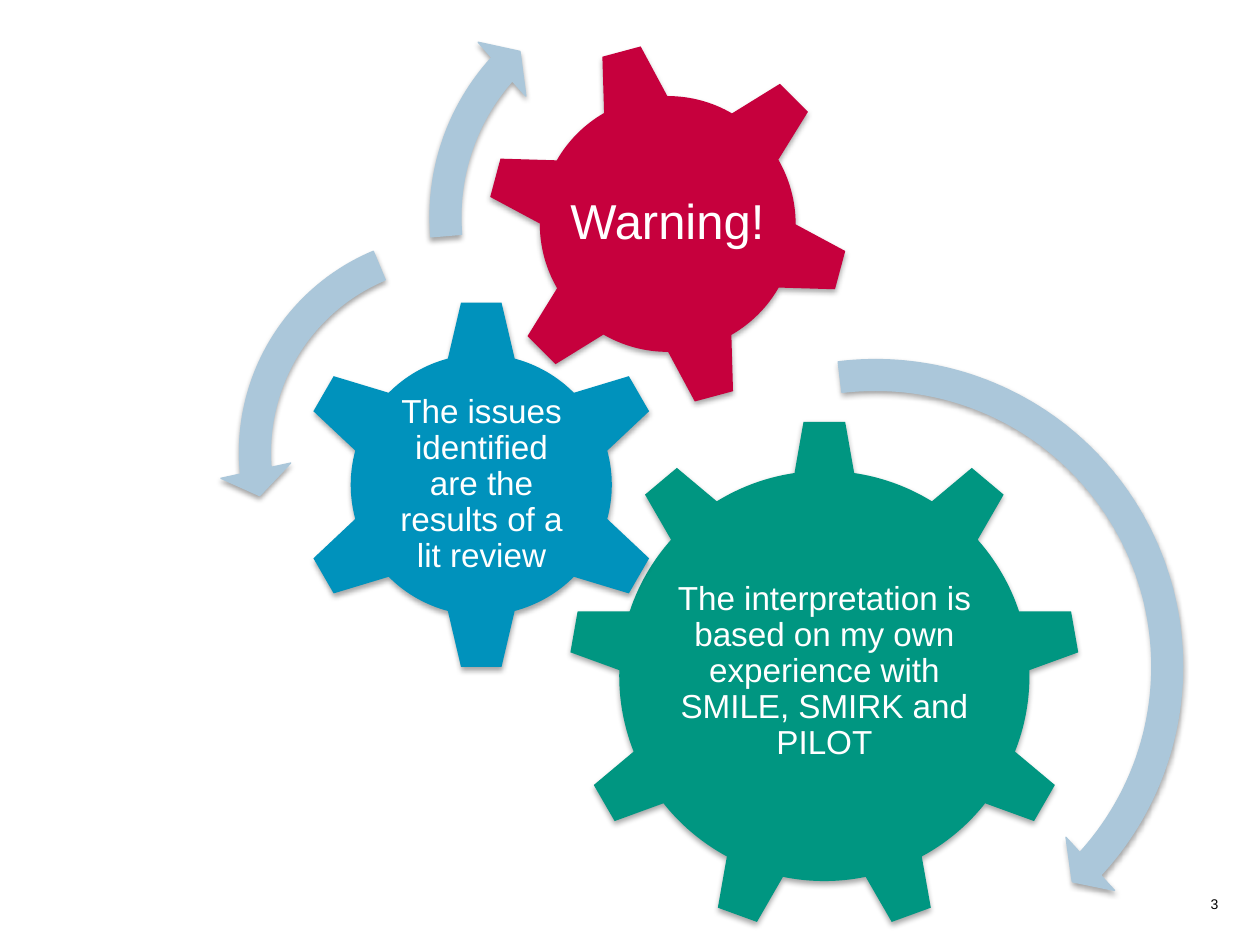
from dataclasses import dataclass

from lxml import etree
from pptx import Presentation
from pptx.dml import color
from pptx.enum import shapes, text
from pptx.oxml import ns
from pptx.util import Pt


@dataclass(frozen=True)
class Theme:
    font: str = "Arial"
    white: str = "FFFFFF"
    black: str = "000000"
    green: str = "009681"
    blue: str = "0092BC"
    red: str = "C6003D"
    pale: str = "ABC7DA"
    title: float = 28
    body: float = 19
    small: float = 8


@dataclass(frozen=True)
class Label:
    words: str
    left: float
    top: float
    width: float
    height: float
    size: float
    inset: float


@dataclass(frozen=True)
class Gear:
    kind: shapes.MSO_SHAPE
    left: float
    top: float
    side: float
    fill: str
    label: Label
    turn: float = 0


@dataclass(frozen=True)
class Arrow:
    kind: shapes.MSO_SHAPE
    left: float
    top: float
    side: float
    bends: tuple[float, ...]


THEME = Theme()
KIND = shapes.MSO_SHAPE

GEARS = [
    Gear(KIND.GEAR_9, 324.6, 239.8, 293, THEME.green,
         Label("The interpretation is based on my own experience with "
               "SMILE, SMIRK and PILOT", 383.6, 308.4, 175, 150.6, THEME.body, 1.9)),
    Gear(KIND.GEAR_6, 168.5, 170.5, 213.1, THEME.blue,
         Label("The issues identified are the results of a lit review",
               222.3, 224.6, 105.8, 105, THEME.body, 1.9)),
    Gear(KIND.GEAR_6, 277.2, 23.6, 208.8, THEME.red,
         Label("Warning!", 322.7, 69.1, 117.4, 117.4, THEME.title, 2.8), 345),
]

ARROWS = [
    Arrow(KIND.CIRCULAR_ARROW, 313.2, 193.7, 374.4,
          (0.047, 2.99, 25.56, 157.79, 0.055)),
    Arrow(KIND.LEFT_CIRCULAR_ARROW, 125.3, 122.4, 272.2,
          (0.065, 4.3, 104.89, 148.38, 0.075)),
    Arrow(KIND.CIRCULAR_ARROW, 234, -23, 293.8,
          (0.06, 3.94, 133.14, 105.08, 0.07)),
]


def rgb(code: str) -> color.RGBColor:
    return color.RGBColor.from_string(code)


def shade(shape) -> None:
    """Give the shape a soft shadow straight below it."""
    shape.shadow.inherit = False
    effects = shape._element.spPr.find(ns.qn("a:effectLst"))
    outer = etree.SubElement(effects, ns.qn("a:outerShdw"), blurRad=str(Pt(3.1)),
                             dist=str(Pt(1.8)), dir="5400000", rotWithShape="0")
    tone = etree.SubElement(outer, ns.qn("a:srgbClr"), val=THEME.black)
    etree.SubElement(tone, ns.qn("a:alpha"), val="35000")


def square(slide, item: Gear | Arrow, fill: str):
    shape = slide.shapes.add_shape(item.kind, Pt(item.left), Pt(item.top),
                                   Pt(item.side), Pt(item.side))
    shape.fill.solid()
    shape.fill.fore_color.rgb = rgb(fill)
    return shape


def write(slide, label: Label, tint: str, align: text.PP_ALIGN,
          anchor: text.MSO_ANCHOR, pitch: float) -> None:
    box = slide.shapes.add_textbox(Pt(label.left), Pt(label.top),
                                   Pt(label.width), Pt(label.height))
    frame = box.text_frame
    frame.word_wrap = True
    frame.vertical_anchor = anchor
    frame.margin_left = frame.margin_right = Pt(label.inset)
    frame.margin_top = frame.margin_bottom = Pt(label.inset)
    frame.text = label.words
    para = frame.paragraphs[0]
    para.alignment = align
    para.line_spacing = pitch
    font = para.runs[0].font
    font.name = THEME.font
    font.size = Pt(label.size)
    font.color.rgb = rgb(tint)


def draw_gear(slide, gear: Gear) -> None:
    shape = square(slide, gear, gear.fill)
    shape.rotation = gear.turn
    shape.line.fill.background()
    shade(shape)
    write(slide, gear.label, THEME.white, text.PP_ALIGN.CENTER,
          text.MSO_ANCHOR.MIDDLE, 0.9)


def draw_arrow(slide, arrow: Arrow) -> None:
    shape = square(slide, arrow, THEME.pale)
    for spot, bend in enumerate(arrow.bends):
        shape.adjustments[spot] = bend
    shape.line.color.rgb = rgb(THEME.pale)
    shape.line.width = Pt(0.75)
    shade(shape)


def main() -> None:
    deck = Presentation()
    deck.slide_width, deck.slide_height = Pt(720), Pt(540)
    slide = deck.slides.add_slide(deck.slide_layouts[6])

    # Page number
    write(slide, Label("3", 388.1, 508.3, 311.8, 17.3, THEME.small, 3.6),
          THEME.black, text.PP_ALIGN.RIGHT, text.MSO_ANCHOR.TOP, 1)

    # Gears with their labels
    for gear in GEARS:
        draw_gear(slide, gear)

    # Arrows around the gears
    for arrow in ARROWS:
        draw_arrow(slide, arrow)

    deck.save("out.pptx")


if __name__ == "__main__":
    main()
